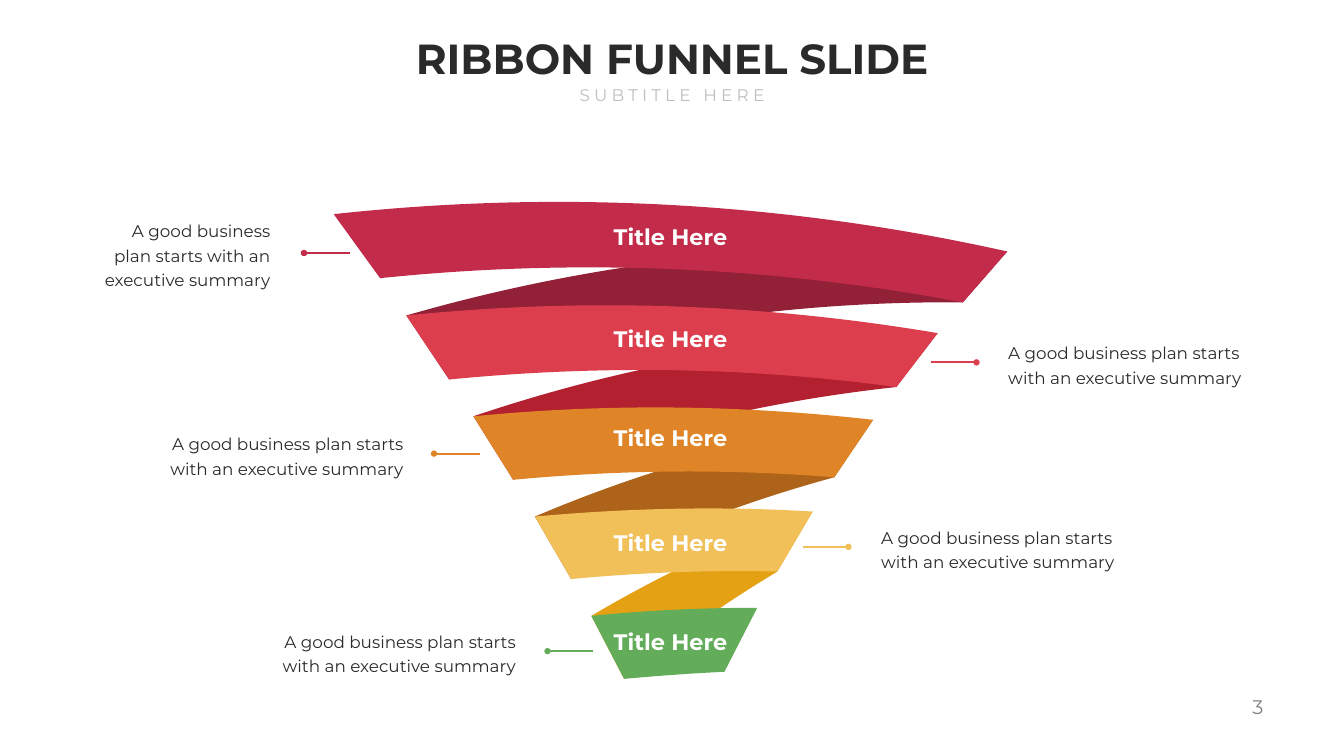
"""Build a ribbon funnel slide with five captioned bands."""
from lxml.etree import SubElement
from pptx import Presentation
from pptx.dml.color import RGBColor
from pptx.enum.shapes import MSO_CONNECTOR as Conn
from pptx.enum.text import MSO_ANCHOR as Anchor, MSO_AUTO_SIZE as Fit, PP_ALIGN as Align
from pptx.oxml.ns import qn
from pptx.util import Inches, Pt

WIDE, HIGH = 26.66, 15
STEPS = 40
INK = RGBColor(0x2A, 0x2A, 0x2A)
PALE = RGBColor(0xBF, 0xBF, 0xBF)
GREY = RGBColor(0x80, 0x80, 0x80)
WHITE = RGBColor(0xFF, 0xFF, 0xFF)
WINE = RGBColor(0xC2, 0x2B, 0x49)
RED = RGBColor(0xDC, 0x3E, 0x4E)
ORANGE = RGBColor(0xE0, 0x84, 0x28)
YELLOW = RGBColor(0xF1, 0xC0, 0x58)
GREEN = RGBColor(0x62, 0xAC, 0x5A)
DARK_WINE = RGBColor(0x92, 0x20, 0x37)
DARK_RED = RGBColor(0xB3, 0x20, 0x2F)
BROWN = RGBColor(0xAD, 0x63, 0x19)
GOLD = RGBColor(0xE4, 0xA1, 0x13)

HEAD, SUB, PAGE = "RIBBON FUNNEL SLIDE", "SUBTITLE HERE", "3"
LABEL = "Title Here"
NOTE = "A good business plan starts with an executive summary"

BANDS = [
    dict(color=WINE, label=4.7,
         corners=[(6.62, 4.25), (7.54, 5.52), (19.1, 6), (19.98, 4.99)],
         low=[(11.4, 5.12), (15.28, 5.28)], top=[(15.59, 4.01), (11.09, 3.76)]),
    dict(color=RED, label=6.71,
         corners=[(8.06, 6.26), (8.91, 7.53), (17.78, 7.68), (18.6, 6.61)],
         low=[(11.87, 7.24), (14.83, 7.28)], top=[(15.11, 6.02), (11.58, 5.9)]),
    dict(color=ORANGE, label=8.69,
         corners=[(9.39, 8.26), (10.18, 9.52), (16.55, 9.47), (17.32, 8.33)],
         low=[(12.3, 9.32), (14.43, 9.3)], top=[(14.68, 8.03), (12.03, 8)]),
    dict(color=YELLOW, label=10.77,
         corners=[(10.61, 10.25), (11.33, 11.49), (15.42, 11.34), (16.12, 10.15)],
         low=[(12.69, 11.36), (14.05, 11.31)], top=[(14.28, 10.04), (12.45, 10.08)]),
    dict(color=GREEN, label=12.72,
         corners=[(11.73, 12.22), (12.38, 13.47), (14.37, 13.33), (15.02, 12.06)],
         low=[(13.04, 13.41), (13.71, 13.36)], top=[(13.92, 12.06), (12.82, 12.11)]),
]
FOLDS = [
    (DARK_WINE, [(12.22, 6.48), (15.65, 5.97)], [(15.97, 4.71), (11.94, 5.14)]),
    (DARK_RED, [(12.63, 8.57), (15.18, 7.96)], [(15.47, 6.7), (12.38, 7.25)]),
    (BROWN, [(13, 10.63), (14.75, 9.96)], [(15.02, 8.7), (12.77, 9.33)]),
    (GOLD, [(13.35, 12.68), (14.36, 11.98)], [(14.6, 10.7), (13.13, 11.39)]),
]
CALLS = [
    dict(color=WINE, side=-1, x=6.94, y=5.02, edge=5.6, size=(3.99, 1.67)),
    dict(color=RED, side=1, x=18.46, y=7.19, edge=19.76, size=(5.24, 1.18)),
    dict(color=ORANGE, side=-1, x=9.52, y=9, edge=8.24, size=(5.24, 1.18)),
    dict(color=YELLOW, side=1, x=15.92, y=10.85, edge=17.24, size=(5.24, 1.18)),
    dict(color=GREEN, side=-1, x=11.77, y=12.92, edge=10.47, size=(5.24, 1.18)),
]
REACH = 0.91


def span(axis, *curves):
    """Return the least and greatest value of cubic curves on one axis."""
    vals = []
    for curve in curves:
        a, b, c, d = (dot[axis] for dot in curve)
        for n in range(STEPS + 1):
            t = n / STEPS
            u = 1 - t
            vals.append(a * u ** 3 + 3 * t * u * (b * u + c * t) + d * t ** 3)
    return min(vals), max(vals)


def thirds(a, b):
    """Return the two grips of a straight side."""
    return [tuple(p + (q - p) * k / 3 for p, q in zip(a, b)) for k in (1, 2)]


def ribbon(shapes, color, corners, low, top):
    """Draw one piece with curved lower and upper edges."""
    tl, bl, br, tr = corners
    (left, right), (roof, floor) = (
        span(i, (bl, *low, br), (tr, *top, tl)) for i in (0, 1))
    pen = shapes.build_freeform(Inches(left), Inches(roof), scale=1.0)
    pen.add_line_segments([(Inches(right), Inches(floor))])
    piece = pen.convert_to_shape()
    trace = next(piece._element.iter(qn("a:path")))
    for kid in list(trace):
        trace.remove(kid)
    steps = [("moveTo", [bl]), ("cubicBezTo", [*low, br]),
             ("cubicBezTo", [*thirds(br, tr), tr]), ("cubicBezTo", [*top, tl]),
             ("cubicBezTo", [*thirds(tl, bl), bl]), ("close", [])]
    for name, dots in steps:
        step = SubElement(trace, qn("a:" + name))
        for x, y in dots:
            SubElement(step, qn("a:pt"), x=str(Inches(x - left)), y=str(Inches(y - roof)))
    piece.shadow.inherit = False
    piece.fill.solid()
    piece.fill.fore_color.rgb = color
    piece.line.fill.background()


def write(box, place, text, size, color, align, bold=False, track=0,
          frame=None, para=None):
    """Place a text shape and format its only paragraph."""
    box.left, box.top, box.width, box.height = map(Inches, place)
    tf = box.text_frame
    tf.text = text
    look = dict(word_wrap=False, auto_size=Fit.SHAPE_TO_FIT_TEXT,
                vertical_anchor=Anchor.TOP) | (frame or {})
    line = tf.paragraphs[0]
    run = line.runs[0]
    jobs = [(tf, look),
            (line, dict(alignment=align, space_before=Pt(0)) | (para or {})),
            (run.font, dict(name="Montserrat", size=Pt(size), bold=bold))]
    for part, values in jobs:
        for key, value in values.items():
            setattr(part, key, value)
    run.font.color.rgb = color
    if track:
        run.font._element.set("spc", str(track * 100))


def call(shapes, color, side, x, y, edge, size):
    """Draw a dotted lead line and its caption."""
    lead = shapes.add_connector(
        Conn.STRAIGHT, *map(Inches, (x, y, x + side * REACH, y)))
    lead.line.color.rgb = color
    lead.line.width = Pt(3)
    SubElement(lead.line._get_or_add_ln(), qn("a:tailEnd"), type="oval")
    SubElement(lead._element.spPr, qn("a:effectLst"))
    wide, high = size
    left = edge if side > 0 else edge - wide
    write(shapes.add_textbox(0, 0, 0, 0), (left, y + 0.01 - high / 2, wide, high), NOTE,
          24, INK, Align.LEFT if side > 0 else Align.RIGHT,
          frame=dict(word_wrap=True, vertical_anchor=Anchor.MIDDLE,
                     margin_left=Inches(0.24), margin_right=Inches(0.24),
                     margin_top=Inches(0.12), margin_bottom=Inches(0.12)),
          para=dict(line_spacing=Pt(35), space_before=Pt(4.8)))


def main():
    """Assemble and save the slide."""
    deck = Presentation()
    deck.slide_width, deck.slide_height = Inches(WIDE), Inches(HIGH)
    slide = deck.slides.add_slide(deck.slide_layouts[0])
    shapes = slide.shapes
    mid = WIDE / 2
    write(shapes.title, (mid - 5.23, HIGH * 0.04, 10.46, 1.11), HEAD, 60, INK,
          Align.CENTER, bold=True)
    write(slide.placeholders[1], (mid - 2, 1.64, 4, 0.5), SUB, 24, PALE,
          Align.CENTER, track=6)
    for (color, low, top), above, below in zip(FOLDS, BANDS, BANDS[1:]):
        corners = below["corners"][:2] + above["corners"][2:]
        ribbon(shapes, color, corners, low, top)
    for band in BANDS:
        ribbon(shapes, band["color"], band["corners"], band["low"], band["top"])
    for item in CALLS:
        call(shapes, **item)
    for band in BANDS:
        write(shapes.add_textbox(0, 0, 0, 0), (12.06, band["label"] - 0.32, 2.48, 0.64),
              LABEL, 32, WHITE, Align.CENTER, bold=True,
              frame=dict(vertical_anchor=Anchor.MIDDLE))
    write(shapes.add_textbox(0, 0, 0, 0), (24.32, 13.74, 0.84, 0.57), PAGE, 28, GREY,
          Align.RIGHT, track=3)
    deck.save("out.pptx")


if __name__ == "__main__":
    main()
